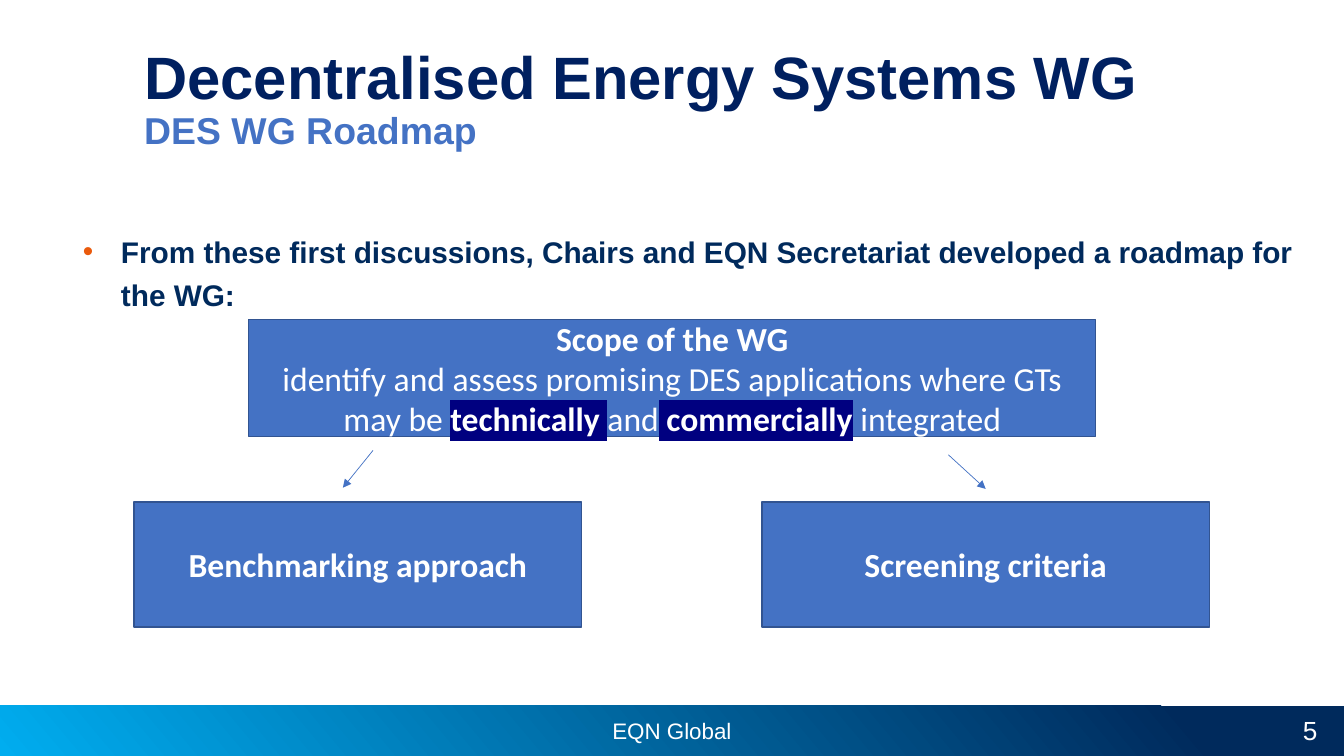
import pptx
import pptx.dml.color
import pptx.enum.shapes
import pptx.enum.text
import pptx.oxml
import pptx.oxml.ns
import pptx.util
from pptx.util import Cm

COLOURS = {
    "title": "002060",
    "blue": "4472C4",
    "outline": "325491",
    "navy": "002A5C",
    "cyan": "00ADEF",
    "bullet": "EA5A0C",
    "highlight": "000080",
    "white": "FFFFFF",
}
ALIGN = pptx.enum.text.PP_ALIGN
MIDDLE = pptx.enum.text.MSO_ANCHOR.MIDDLE
RECTANGLE = pptx.enum.shapes.MSO_SHAPE.RECTANGLE


def colour(name):
    return pptx.dml.color.RGBColor.from_string(COLOURS[name])


def element(tag, **attributes):
    node = pptx.oxml.parse_xml(f"<a:{tag} {pptx.oxml.ns.nsdecls('a')}/>")
    for key, value in attributes.items():
        node.set(key, value)
    return node


def write(para, text, size=24, font="Calibri", color="white", bold=False, highlight=None):
    """Add one formatted span of text to a paragraph."""
    span = para.add_run()
    span.text = text
    span.font.size = pptx.util.Pt(size)
    span.font.name = font
    span.font.bold = bold
    span.font.color.rgb = colour(color)
    if highlight:
        mark = element("highlight")
        swatch = element("srgbClr", val=COLOURS[highlight])
        mark.append(swatch)
        properties = span.font._element
        properties.find(pptx.oxml.ns.qn("a:solidFill")).addnext(mark)
    return span


def add_text_box(page, left, top, width, height, align=ALIGN.LEFT):
    """Add a wrapping text box and return it with its first paragraph."""
    box = page.shapes.add_textbox(Cm(left), Cm(top), Cm(width), Cm(height))
    box.text_frame.word_wrap = True
    para = box.text_frame.paragraphs[0]
    para.alignment = align
    return box, para


def add_block(page, left, top, width, height, heading):
    """Add a blue outlined rectangle with a bold centred heading."""
    block = page.shapes.add_shape(RECTANGLE, Cm(left), Cm(top), Cm(width), Cm(height))
    block.shadow.inherit = False
    block.fill.solid()
    block.fill.fore_color.rgb = colour("blue")
    block.line.color.rgb = colour("outline")
    block.line.width = pptx.util.Pt(1)
    frame = block.text_frame
    frame.word_wrap = True
    frame.vertical_anchor = MIDDLE
    frame.paragraphs[0].alignment = ALIGN.CENTER
    write(frame.paragraphs[0], heading, bold=True)
    return block


def add_arrow(page, start, end):
    arrow = page.shapes.add_connector(
        pptx.enum.shapes.MSO_CONNECTOR.STRAIGHT, *map(Cm, start + end))
    arrow.line.color.rgb = colour("blue")
    arrow.line.width = pptx.util.Pt(0.5)
    arrow.line._get_or_add_ln().append(element("tailEnd", type="triangle"))
    arrow._element.spPr.append(element("effectLst"))


def add_title(page):
    title = page.shapes.title
    title.left, title.top, title.width, title.height = map(Cm, (3.38, 0.84, 30.48, 3.38))
    frame = title.text_frame
    frame.word_wrap = True
    frame.vertical_anchor = MIDDLE
    para = frame.paragraphs[0]
    para.alignment = ALIGN.LEFT
    para.line_spacing = 0.9
    write(para, "Decentralised Energy Systems WG", size=42.7, font="Arial",
          color="title", bold=True)
    para.add_line_break()
    write(para, "DES WG Roadmap", size=26.7, font="Arial", color="blue", bold=True)


def add_footer(page):
    bar = page.shapes.add_shape(RECTANGLE, 0, Cm(17.78), Cm(33.87), Cm(1.27))
    bar.shadow.inherit = False
    bar.line.fill.background()
    bar.fill.gradient()
    bar.fill.gradient_angle = 220
    stops = zip(bar.fill.gradient_stops, ("navy", "cyan"), (0.12, 1))
    for stop, name, position in stops:
        stop.color.rgb = colour(name)
        stop.position = position

    box, para = add_text_box(page, 8.53, 17.78, 16.81, 1.24, ALIGN.CENTER)
    box.text_frame.vertical_anchor = MIDDLE
    write(para, "EQN Global", size=16, font="Arial")

    # Slide number
    box, para = add_text_box(page, 25.55, 17.88, 7.9, 1.02, ALIGN.RIGHT)
    box.text_frame.vertical_anchor = MIDDLE
    write(para, "5", size=18.7, font="Arial")


def add_introduction(page):
    box, para = add_text_box(page, 0.56, 4.55, 32.74, 3.3)
    box.text_frame.margin_top = Cm(1.16)
    properties = para._element.get_or_add_pPr()
    properties.set("marL", str(Cm(2.24)))
    properties.set("indent", str(Cm(-0.96)))
    para.line_spacing = 1.2
    bullet_colour = element("buClr")
    bullet_colour.append(element("srgbClr", val=COLOURS["bullet"]))
    properties.append(bullet_colour)
    properties.append(element("buFont", typeface="Arial"))
    properties.append(element("buChar", char="•"))
    write(para, "From these first discussions, Chairs and EQN Secretariat "
          "developed a roadmap for the WG:", size=21.3, font="Arial",
          color="navy", bold=True)


def add_roadmap(page):
    # Scope
    scope = add_block(page, 6.27, 8.05, 21.34, 2.95, "Scope of the WG")
    para = scope.text_frame.add_paragraph()
    para.alignment = ALIGN.CENTER
    write(para, "identify and assess promising DES applications where GTs may be ")
    write(para, "technically ", bold=True, highlight="highlight")
    write(para, "and")
    write(para, " commercially", bold=True, highlight="highlight")
    write(para, " integrated")

    # Two work strands
    for left, heading in ((3.38, "Benchmarking approach"), (19.2, "Screening criteria")):
        add_block(page, left, 12.65, 11.28, 3.15, heading)
    add_arrow(page, (23.9, 11.46), (24.84, 12.32))
    add_arrow(page, (9.4, 11.35), (8.64, 12.29))


def main():
    deck = pptx.Presentation()
    deck.slide_width, deck.slide_height = Cm(33.87), Cm(19.05)
    page = deck.slides.add_slide(deck.slide_layouts.get_by_name("Title Only"))
    add_footer(page)
    add_title(page)
    add_introduction(page)
    add_roadmap(page)
    deck.save("out.pptx")


if __name__ == "__main__":
    main()
